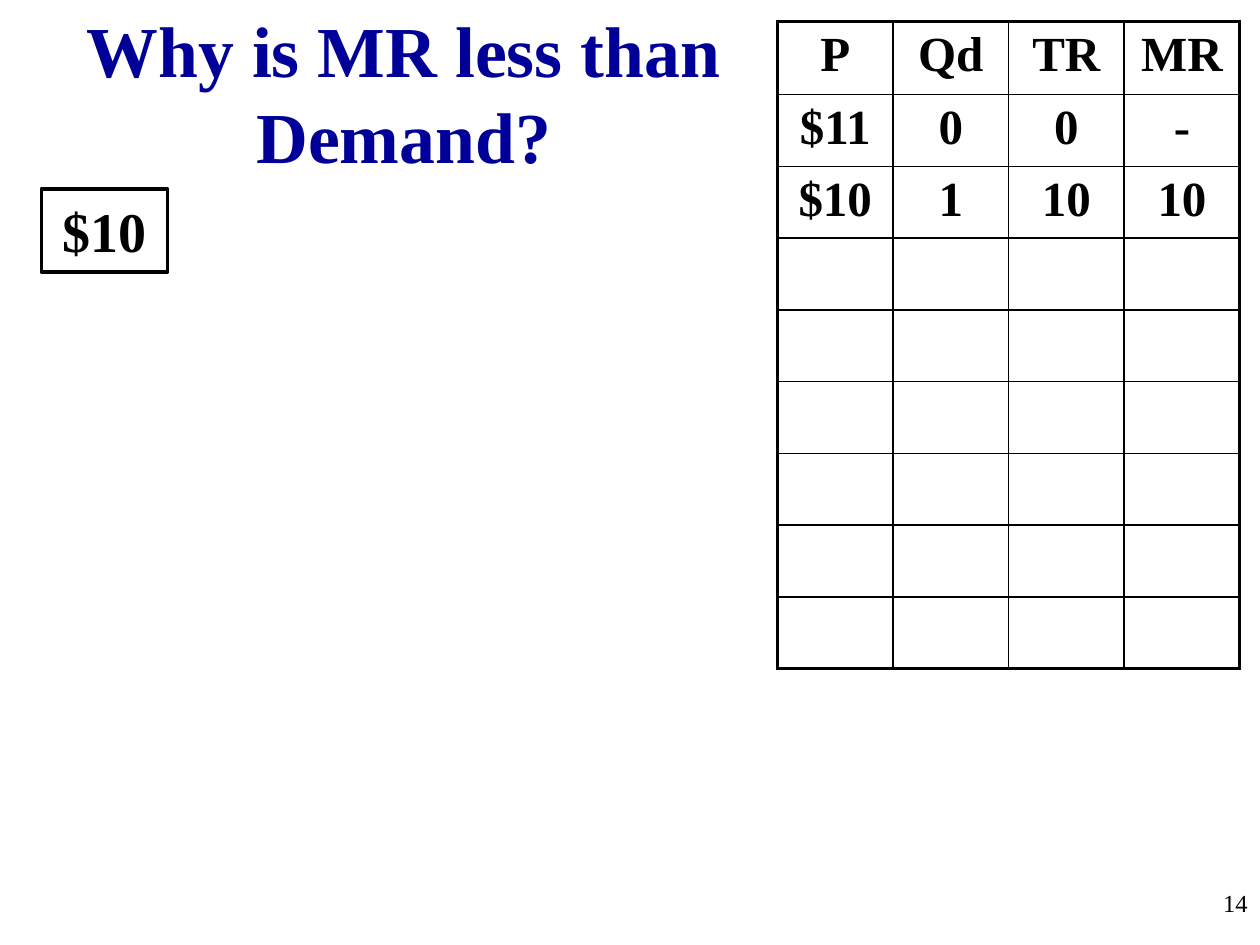
from lxml import etree
from pptx import Presentation
from pptx import util as u
from pptx.dml.color import RGBColor
from pptx.enum import shapes, text
from pptx.oxml.ns import qn

FONT = "Times New Roman"
INK = "000000"
ROWS, COLS = 9, 4
DATA = [
    ["P", "Qd", "TR", "MR"],
    ["$11", "0", "0", "-"],
    ["$10", "1", "10", "10"],
]


def color(code):
    return RGBColor.from_string(code)


def write(frame, words, size, hue=INK, bold=True, align=text.PP_ALIGN.CENTER):
    frame.text = words
    para = frame.paragraphs[0]
    para.alignment = align
    for run in para.runs:
        font = run.font
        font.name, font.size, font.bold = FONT, u.Pt(size), bold
        font.color.rgb = color(hue)


def add_text(slide, area, words, size, **style):
    box = slide.shapes.add_textbox(*map(u.Inches, area))
    box.text_frame.word_wrap = True
    write(box.text_frame, words, size, **style)


def add_price(slide, area, words):
    box = slide.shapes.add_shape(shapes.MSO_SHAPE.RECTANGLE, *map(u.Inches, area))
    box.shadow.inherit = False
    box.fill.background()
    box.line.color.rgb = color(INK)
    box.line.width = u.Pt(2.25)
    box.text_frame.vertical_anchor = text.MSO_ANCHOR.MIDDLE
    write(box.text_frame, words, 32)


def set_edges(cell, row, col):
    outer = {"L": col == 0, "R": col == COLS - 1, "T": row == 0, "B": row == ROWS - 1}
    props = cell._tc.get_or_add_tcPr()
    for spot, (side, thick) in enumerate(outer.items()):
        line = etree.Element(qn(f"a:ln{side}"), w=str(u.Pt(2.25 if thick else 1)))
        fill = etree.SubElement(line, qn("a:solidFill"))
        etree.SubElement(fill, qn("a:srgbClr"), val=INK)
        props.insert(spot, line)


def add_grid(slide, area):
    frame = slide.shapes.add_table(ROWS, COLS, *map(u.Inches, area))
    table = frame.table
    table.first_row = table.horz_banding = False
    for row in range(ROWS):
        table.rows[row].height = u.Inches(0.58 if row == 0 else 0.57)
        for col in range(COLS):
            cell = table.cell(row, col)
            cell.fill.background()
            set_edges(cell, row, col)
            if row < len(DATA):
                write(cell.text_frame, DATA[row][col], 28)


def main():
    deck = Presentation()
    deck.slide_width, deck.slide_height = u.Inches(10), u.Inches(7.5)
    slide = deck.slides.add_slide(deck.slide_layouts[6])
    add_price(slide, (0.33, 1.5, 1, 0.66), "$10")
    add_grid(slide, (6.17, 0.17, 3.67, 5.12))
    add_text(slide, (0.58, 0, 5.25, 1.47), "Why is MR less than Demand?", 41, hue="000099")
    add_text(slide, (7.92, 7, 2.08, 0.5), "14", 14, bold=False, align=text.PP_ALIGN.RIGHT)
    deck.save("out.pptx")


if __name__ == "__main__":
    main()
